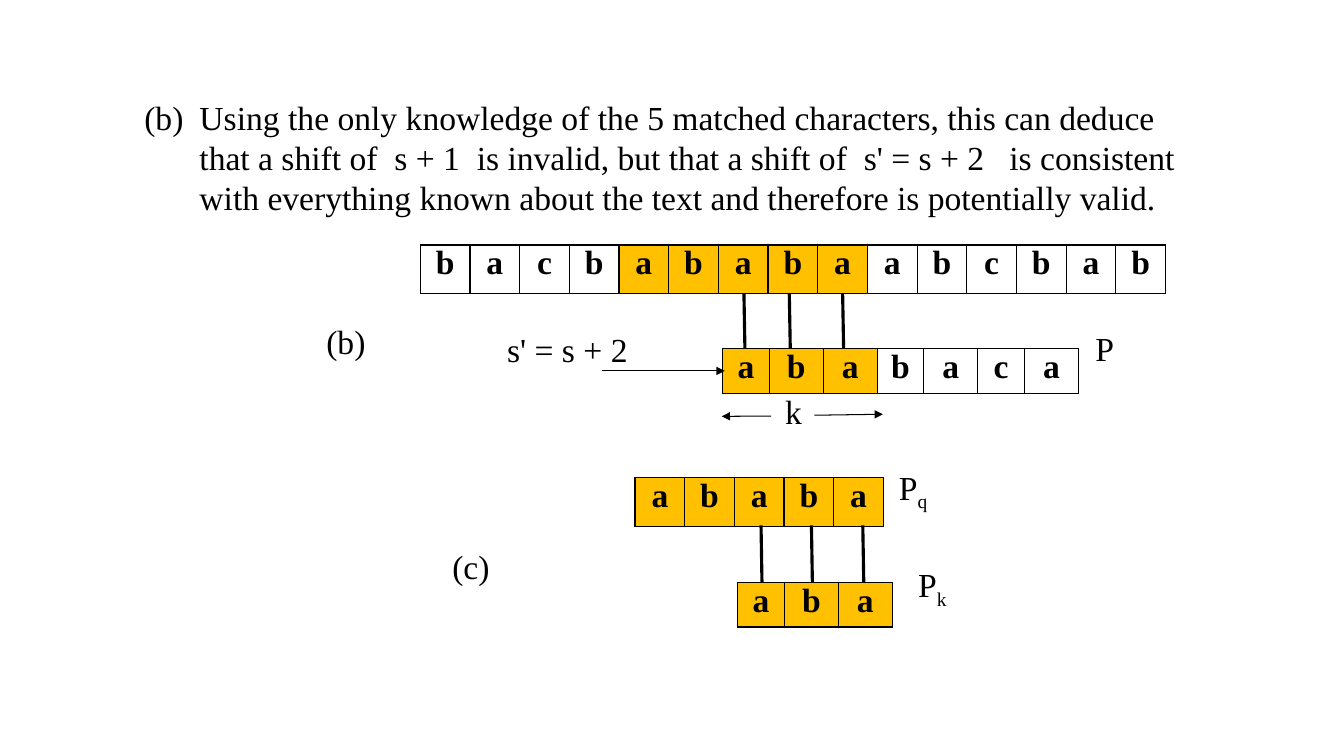
from lxml import etree
from pptx import Presentation
from pptx.dml.color import RGBColor
from pptx.enum.shapes import MSO_CONNECTOR
from pptx.enum.text import PP_ALIGN
from pptx.oxml import parse_xml
from pptx.oxml.ns import nsdecls, qn
from pptx.util import Pt

FONT = "Times New Roman"
BLACK, WHITE, MATCHED = "000000", "FFFFFF", "FFC000"
TEXT_WIDTHS = [35.5] * 15
NARROW, WIDE = 33.3, 38.6
PATTERN_WIDTHS = [NARROW, WIDE, WIDE, NARROW, WIDE, NARROW, WIDE]


def color(value):
    return RGBColor.from_string(value)


def style_run(r, bold=False):
    r.font.name, r.font.size, r.font.bold = FONT, Pt(24), bold
    r.font.color.rgb = color(BLACK)


def add_text(s, x, y, w, text, h=36, subscript=""):
    tf = s.shapes.add_textbox(Pt(x), Pt(y), Pt(w), Pt(h)).text_frame
    tf.word_wrap = True
    p = tf.paragraphs[0]
    p.text = text
    if subscript:
        p.add_run().text = subscript
    for r in p.runs:
        style_run(r)
    if subscript:
        p.runs[-1].font._element.set("baseline", "-25000")
    return p


def add_line(s, x1, y1, x2, y2, width=0.75, arrow=False):
    line = s.shapes.add_connector(
        MSO_CONNECTOR.STRAIGHT, Pt(x1), Pt(y1), Pt(x2), Pt(y2))
    line.line.width = Pt(width)
    line.line.color.rgb = color(BLACK)
    if arrow:
        etree.SubElement(line.line._get_or_add_ln(), qn("a:tailEnd"), type="triangle")
    etree.SubElement(line._element.spPr, qn("a:effectLst"))


def add_matches(s, xs, top, bottom):
    """Join equal characters of two strings."""
    for x in xs:
        add_line(s, x, top, x + 0.7, bottom, 2.25)


def add_borders(cell):
    tcPr = cell._tc.get_or_add_tcPr()
    for i, side in enumerate("LRTB"):
        tcPr.insert(i, parse_xml(
            f'<a:ln{side} {nsdecls("a")} w="12700"><a:solidFill>'
            f'<a:srgbClr val="{BLACK}"/></a:solidFill></a:ln{side}>'))


def add_string(s, x, y, h, letters, widths, matched):
    """Draw one letter per cell, highlighting the matched indices."""
    widths = widths[:len(letters)]
    table = s.shapes.add_table(
        1, len(letters), Pt(x), Pt(y), Pt(sum(widths)), Pt(h)).table
    table.first_row = table.horz_banding = False
    for i, (letter, width) in enumerate(zip(letters, widths)):
        table.columns[i].width = Pt(width)
        cell = table.cell(0, i)
        cell.margin_left = cell.margin_right = Pt(5)
        cell.margin_top = cell.margin_bottom = 0
        cell.fill.solid()
        cell.fill.fore_color.rgb = color(MATCHED if i in matched else WHITE)
        add_borders(cell)
        p = cell.text_frame.paragraphs[0]
        p.text = letter
        p.alignment = PP_ALIGN.CENTER
        style_run(p.runs[0], bold=True)


def add_explanation(s, x, y, w, h):
    p = add_text(
        s, x, y, w,
        "(b)\tUsing the only knowledge of the 5 matched characters, this can deduce "
        "that a shift of  s + 1  is invalid, but that a shift of  s' = s + 2   is "
        "consistent with everything known about the text and therefore is "
        "potentially valid.", h)
    pPr = p._p.get_or_add_pPr()
    pPr.set("marL", str(Pt(45.4)))
    pPr.set("indent", str(Pt(-39.4)))


def add_shift_panel(s, x, y):
    """Text above the pattern shifted to s'."""
    add_string(s, x + 74.2, y, 34.6, "bacbababaabcbab", TEXT_WIDTHS, range(4, 9))
    add_string(s, x + 290.2, y + 74.1, 31.7, "ababaca", PATTERN_WIDTHS, range(3))
    add_matches(s, [x + 305.4, x + 337.8, x + 375.9], y + 34.4, y + 74.1)
    add_text(s, x, y + 51, 46, "(b)")
    add_text(s, x + 129.2, y + 56.1, 119, "s' = s + 2")
    add_text(s, x + 549.4, y + 55.4, 34.6, "P")
    add_text(s, x + 327.7, y + 100.8, 34.6, "k")
    add_line(s, x + 203.8, y + 90, x + 291.7, y + 90, arrow=True)
    add_line(s, x + 324.8, y + 122.2, x + 289.5, y + 122.4, arrow=True)
    add_line(s, x + 355.8, y + 121.6, x + 404.7, y + 120.9, arrow=True)


def add_prefix_panel(s, x, y):
    """Matched prefix Pq above its own prefix Pk."""
    add_string(s, x + 137.6, y + 11.5, 34.6, "ababa", TEXT_WIDTHS, range(5))
    add_string(s, x + 211, y + 86.4, 31.7, "aba", PATTERN_WIDTHS, range(3))
    add_matches(s, [x + 227.6, x + 263.6, x + 300.3], y + 45.5, y + 86.4)
    add_text(s, x, y + 56.8, 46, "(c)")
    add_text(s, x + 319, y, 52.6, "P", subscript="q")
    add_text(s, x + 332.7, y + 69.8, 60.5, "P", subscript="k")


def main():
    prs = Presentation()
    prs.slide_width, prs.slide_height = Pt(960), Pt(540)
    s = prs.slides.add_slide(prs.slide_layouts[6])
    add_explanation(s, 90, 65.5, 775.4, 94.3)
    add_shift_panel(s, 226, 175)
    add_prefix_panel(s, 316, 329.8)
    prs.save("out.pptx")


if __name__ == "__main__":
    main()
